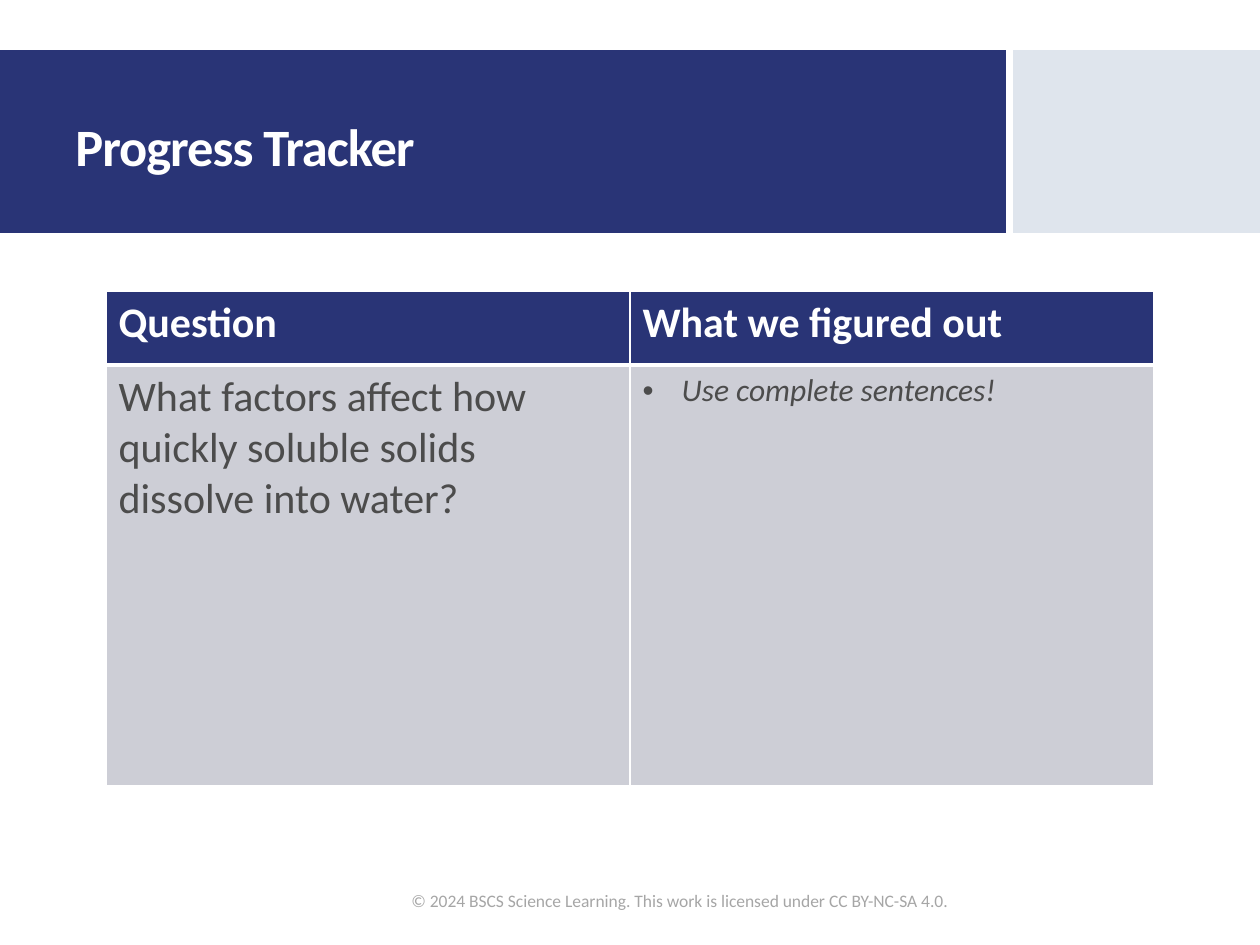
from dataclasses import dataclass

from lxml.etree import SubElement
from pptx import Presentation
from pptx.dml.color import RGBColor as Color
from pptx.enum.shapes import MSO_SHAPE as Shape
from pptx.enum.text import MSO_ANCHOR as Anchor
from pptx.oxml.ns import qn
from pptx.util import Emu, Pt

PX_PER_INCH = 126


def px(length):
    return Emu(round(length * 914400 / PX_PER_INCH))


@dataclass(frozen=True)
class Theme:
    font: str = "Calibri"
    navy: str = "293476"
    pale: str = "DFE5ED"
    cell: str = "CDCED6"
    white: str = "FFFFFF"
    body: str = "4C4C4C"
    muted: str = "A6A6A6"
    title_size: int = 30
    table_size: int = 24
    hint_size: int = 18
    footer_size: int = 10
    thin_line: int = 1
    thick_line: int = 3


class SlideBuilder:
    def __init__(self, slide, theme):
        self.slide = slide
        self.theme = theme

    def style(self, paragraph, size, color, bold=False, italic=False):
        font = paragraph.font
        font.name = self.theme.font
        font.size = Pt(size)
        font.color.rgb = Color.from_string(color)
        font.bold = bold
        font.italic = italic

    def band(self, left, top, width, height, color):
        shape = self.slide.shapes.add_shape(
            Shape.RECTANGLE, px(left), px(top), px(width), px(height))
        shape.shadow.inherit = False
        shape.fill.solid()
        shape.fill.fore_color.rgb = Color.from_string(color)
        shape.line.fill.background()

    def text(self, text, left, top, width, height, size, color, bold=False):
        box = self.slide.shapes.add_textbox(px(left), px(top), px(width), px(height))
        frame = box.text_frame
        frame.word_wrap = True
        frame.vertical_anchor = Anchor.MIDDLE
        paragraph = frame.paragraphs[0]
        paragraph.text = text
        self.style(paragraph, size, color, bold)
        return paragraph

    def title(self, text, left, top, width, height):
        theme = self.theme
        paragraph = self.text(text, left, top, width, height,
                              theme.title_size, theme.white, bold=True)
        paragraph.line_spacing = 0.9
        paragraph.runs[0].font._element.set("spc", "-60")

    def table(self, left, top, column_widths, row_heights):
        table = self.slide.shapes.add_table(
            len(row_heights), len(column_widths), px(left), px(top),
            px(sum(column_widths)), px(sum(row_heights))).table
        table.horz_banding = False
        for column, width in zip(table.columns, column_widths):
            column.width = px(width)
        for row, height in zip(table.rows, row_heights):
            row.height = px(height)
        return table

    def borders(self, cell, top, bottom):
        properties = cell._tc.get_or_add_tcPr()
        thin = self.theme.thin_line
        for side, width in (("L", thin), ("R", thin), ("T", top), ("B", bottom)):
            line = SubElement(properties, qn(f"a:ln{side}"), w=str(Pt(width)))
            fill = SubElement(line, qn("a:solidFill"))
            SubElement(fill, qn("a:srgbClr"), val=self.theme.white)

    def cell(self, cell, text, fill, size, color, top, bottom,
             bold=False, italic=False, bullet=False):
        self.borders(cell, top, bottom)
        cell.fill.solid()
        cell.fill.fore_color.rgb = Color.from_string(fill)
        paragraph = cell.text_frame.paragraphs[0]
        paragraph.text = text
        if bullet:
            properties = paragraph._p.get_or_add_pPr()
            indent = px(39)
            properties.set("marL", str(indent))
            properties.set("indent", str(-indent))
            SubElement(properties, qn("a:buFont"), typeface="Arial")
            SubElement(properties, qn("a:buChar"), char="•")
        self.style(paragraph, size, color, bold, italic)


def main():
    theme = Theme()
    presentation = Presentation()
    presentation.slide_width = px(1260)
    presentation.slide_height = px(945)
    slide = presentation.slides.add_slide(presentation.slide_layouts[6])
    builder = SlideBuilder(slide, theme)

    builder.band(0, 50, 1006, 183, theme.navy)
    builder.band(1013, 50, 247, 183, theme.pale)
    builder.title("Progress Tracker", 63, 73, 873, 154)

    table = builder.table(106, 291, [524, 524], [74, 421])
    for column, heading in enumerate(("Question", "What we figured out")):
        builder.cell(table.cell(0, column), heading, theme.navy, theme.table_size,
                     theme.white, theme.thin_line, theme.thick_line, bold=True)
    builder.cell(table.cell(1, 0),
                 "What factors affect how quickly soluble solids dissolve into water?",
                 theme.cell, theme.table_size, theme.body,
                 theme.thick_line, theme.thin_line)
    builder.cell(table.cell(1, 1), "Use complete sentences!",
                 theme.cell, theme.hint_size, theme.body,
                 theme.thick_line, theme.thin_line, italic=True, bullet=True)

    builder.text("© 2024 BSCS Science Learning. This work is licensed under CC BY-NC-SA 4.0.",
                 399, 876, 611, 50, theme.footer_size, theme.muted)
    presentation.save("out.pptx")


if __name__ == "__main__":
    main()
